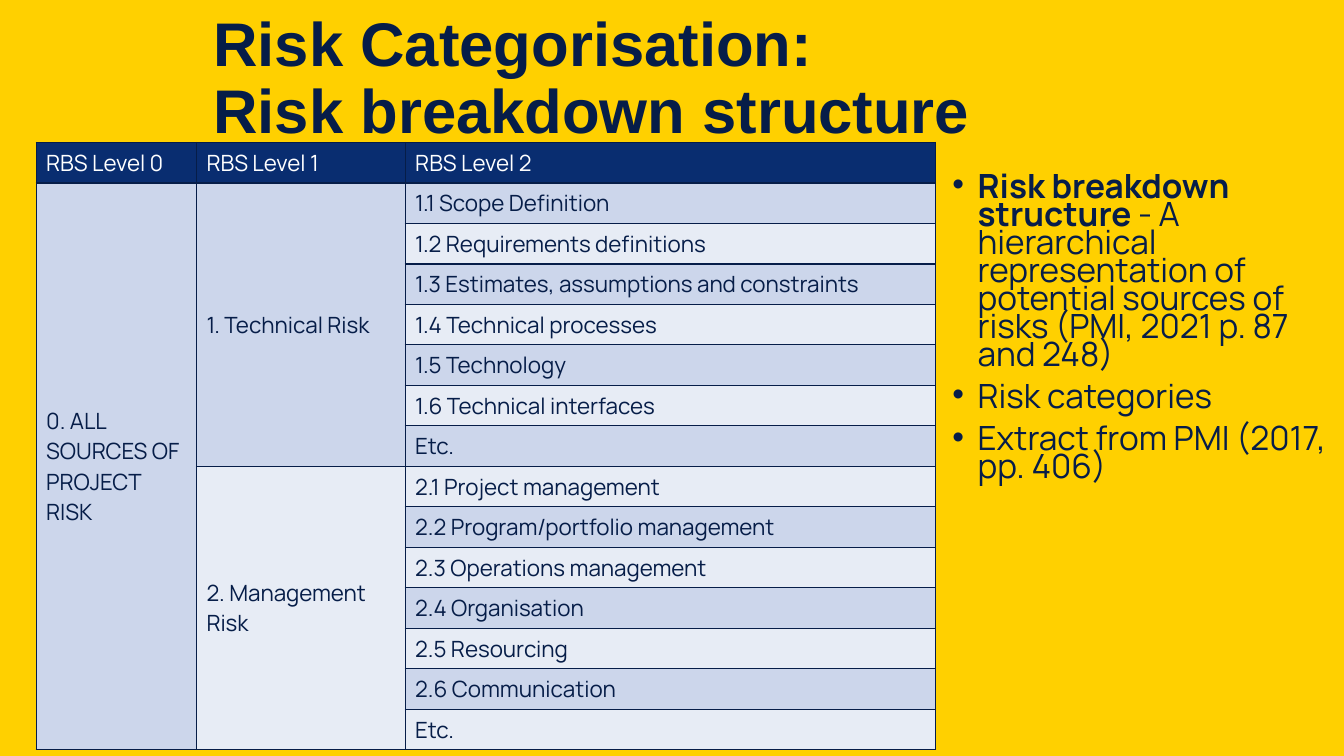
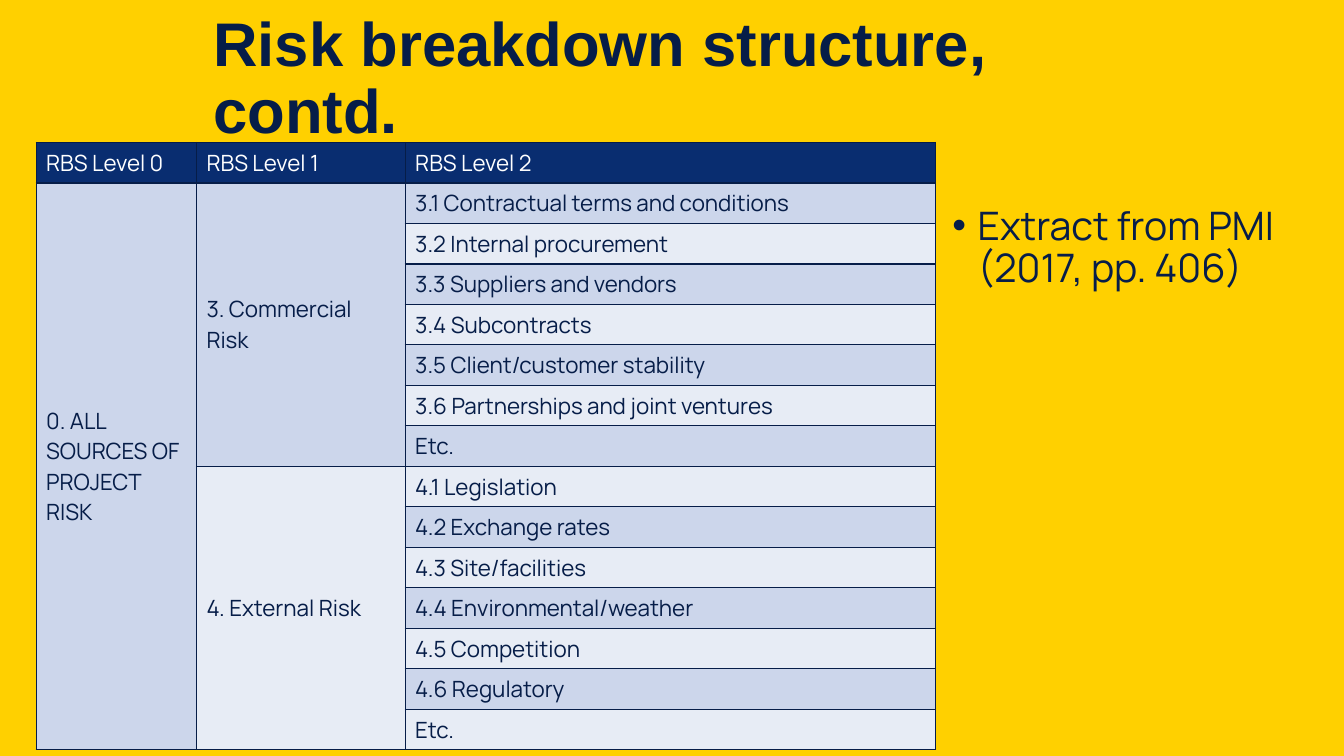
from dataclasses import dataclass

import lxml.etree
import pptx
import pptx.dml.color
import pptx.enum.text
import pptx.oxml.ns
import pptx.util
from pptx.util import Cm, Pt

COLORS = {
    "yellow": "FFD000",
    "navy": "061D48",
    "ink": "071D49",
    "header": "092D70",
    "dark_band": "CCD6EB",
    "light_band": "E7ECF5",
    "white": "FFFFFF",
}
TITLE_FORMAT = {"name": "Arial", "size": Pt(44), "bold": True}
CELL_FORMAT = {"name": "Manrope", "size": Pt(16), "bold": False}

HEADERS = ("RBS Level 0", "RBS Level 1", "RBS Level 2")
ROOT = "0. ALL SOURCES OF PROJECT RISK"
COLUMN_WIDTHS = (Cm(4.04), Cm(5.26), Cm(13.36))
ROW_HEIGHT = Cm(1.02)
BODY_BOTTOM = Cm(13.11)


@dataclass(frozen=True)
class Category:
    name: str
    risks: tuple[str, ...]


@dataclass(frozen=True)
class Bullet:
    text: str
    term: str = ""


@dataclass(frozen=True)
class RiskSlide:
    title: str
    title_width: int
    categories: tuple[Category, ...]
    bullets: tuple[Bullet, ...]
    body_top: int
    body_size: float
    body_spacing: float


SOURCE = Bullet("Extract from PMI (2017, pp. 406)")
SLIDES = (
    RiskSlide(
        "Risk Categorisation:\vRisk breakdown structure",
        Cm(24.94),
        (
            Category("1. Technical Risk", (
                "1.1 Scope Definition",
                "1.2 Requirements definitions",
                "1.3 Estimates, assumptions and constraints",
                "1.4 Technical processes",
                "1.5 Technology",
                "1.6 Technical interfaces",
                "Etc.",
            )),
            Category("2. Management Risk", (
                "2.1 Project management",
                "2.2 Program/portfolio management",
                "2.3 Operations management",
                "2.4 Organisation",
                "2.5 Resourcing",
                "2.6 Communication",
                "Etc.",
            )),
        ),
        (
            Bullet("- A hierarchical representation of potential sources of risks "
                   "(PMI, 2021 p. 87 and 248)", "Risk breakdown structure "),
            Bullet("Risk categories"),
            SOURCE,
        ),
        Cm(4.32), 23.8, 0.7,
    ),
    RiskSlide(
        "Risk breakdown structure, contd.",
        Cm(20.88),
        (
            Category("3. Commercial Risk", (
                "3.1 Contractual terms and conditions",
                "3.2 Internal procurement",
                "3.3 Suppliers and vendors",
                "3.4 Subcontracts",
                "3.5 Client/customer stability",
                "3.6 Partnerships and joint ventures",
                "Etc.",
            )),
            Category("4. External Risk", (
                "4.1 Legislation",
                "4.2 Exchange rates",
                "4.3 Site/facilities",
                "4.4 Environmental/weather",
                "4.5 Competition",
                "4.6 Regulatory",
                "Etc.",
            )),
        ),
        (SOURCE,),
        Cm(5.08), 28, 0.9,
    ),
)


def rgb(color: str) -> pptx.dml.color.RGBColor:
    return pptx.dml.color.RGBColor.from_string(COLORS[color])


def add_xml(parent, tag: str, **attributes: str):
    return lxml.etree.SubElement(parent, pptx.oxml.ns.qn(tag), attributes)


def format_font(font, color: str, values: dict) -> None:
    for name, value in values.items():
        setattr(font, name, value)
    font.color.rgb = rgb(color)


def add_title(s, slide: RiskSlide) -> None:
    tf = s.shapes.add_textbox(Cm(5.13), Cm(0.18), slide.title_width, Cm(3.68)).text_frame
    tf.word_wrap = True
    tf.vertical_anchor = pptx.enum.text.MSO_ANCHOR.MIDDLE
    p = tf.paragraphs[0]
    p.text = slide.title
    p.line_spacing = 0.9
    for r in p.runs:
        format_font(r.font, "navy", TITLE_FORMAT)


def add_bullets(s, slide: RiskSlide) -> None:
    height = BODY_BOTTOM - slide.body_top
    tf = s.shapes.add_textbox(Cm(23.75), slide.body_top, Cm(9.96), height).text_frame
    tf.word_wrap = True
    for i, bullet in enumerate(slide.bullets):
        p = tf.add_paragraph() if i else tf.paragraphs[0]
        pPr = p._p.get_or_add_pPr()
        indent = Cm(0.64)
        pPr.set("marL", str(indent))
        pPr.set("indent", str(-indent))
        add_xml(pPr, "a:buFont", typeface="Arial")
        add_xml(pPr, "a:buChar", char="•")
        p.line_spacing = slide.body_spacing
        if i:
            p.space_before = Pt(10)
        for text, bold in ((bullet.term, True), (bullet.text, False)):
            if text:
                r = p.add_run()
                r.text = text
                format_font(r.font, "ink", {
                    "name": "Manrope", "size": Pt(slide.body_size), "bold": bold})


def style_cell(cell, fill: str, color: str) -> None:
    tcPr = cell._tc.get_or_add_tcPr()
    for side in ("a:lnL", "a:lnR", "a:lnT", "a:lnB"):
        line = add_xml(tcPr, side, w=str(Pt(1)))
        add_xml(add_xml(line, "a:solidFill"), "a:srgbClr", val=COLORS["navy"])
    cell.fill.solid()
    cell.fill.fore_color.rgb = rgb(fill)
    cell.vertical_anchor = pptx.enum.text.MSO_ANCHOR.MIDDLE
    p = cell.text_frame.paragraphs[0]
    format_font(p.font, color, CELL_FORMAT)
    for r in p.runs:
        format_font(r.font, color, CELL_FORMAT)


def add_risk_table(s, categories: tuple[Category, ...]) -> None:
    row_count = 1 + sum(len(category.risks) for category in categories)
    table = s.shapes.add_table(
        row_count, len(HEADERS), Cm(0.91), Cm(3.59),
        sum(COLUMN_WIDTHS), row_count * ROW_HEIGHT).table
    table.first_row = table.horz_banding = False
    for column, width in zip(table.columns, COLUMN_WIDTHS):
        column.width = width
    for i, header in enumerate(HEADERS):
        table.cell(0, i).text = header
    table.cell(1, 0).text = ROOT
    table.cell(1, 0).merge(table.cell(row_count - 1, 0))
    first = 1
    for category in categories:
        last = first + len(category.risks) - 1
        table.cell(first, 1).text = category.name
        for row, risk in enumerate(category.risks, first):
            table.cell(row, 2).text = risk
        table.cell(first, 1).merge(table.cell(last, 1))
        first = last + 1
    for i, row in enumerate(table.rows):
        band = "dark_band" if i % 2 else "light_band"
        for cell in row.cells:
            style_cell(cell, band if i else "header", "navy" if i else "white")


def main() -> None:
    prs = pptx.Presentation()
    prs.slide_width, prs.slide_height = Cm(33.87), Cm(19.05)
    background = prs.slide_master.background.fill
    background.solid()
    background.fore_color.rgb = rgb("yellow")
    for slide in SLIDES:
        s = prs.slides.add_slide(prs.slide_layouts[6])
        add_title(s, slide)
        add_bullets(s, slide)
        add_risk_table(s, slide.categories)
    prs.save("out.pptx")


if __name__ == "__main__":
    main()
